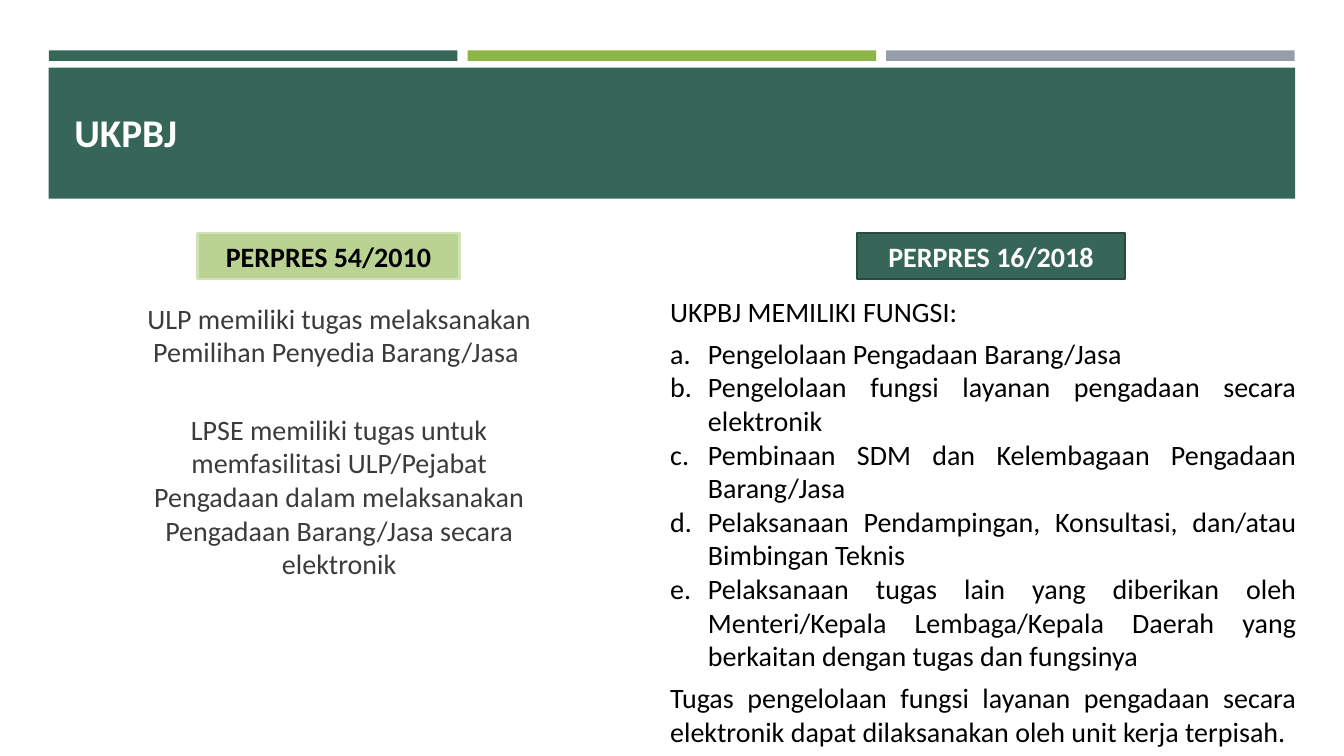
from dataclasses import dataclass

from lxml import etree
from pptx import Presentation
from pptx.dml.color import RGBColor
from pptx.enum import shapes, text
from pptx.oxml import ns
from pptx.util import Pt


@dataclass(frozen=True)
class Theme:
    font: str = "Calibri"
    title_size: float = 28
    body_size: float = 20
    green: str = "366658"
    green_edge: str = "284B41"
    lime: str = "8CB64A"
    lime_pale: str = "BAD392"
    lime_edge: str = "D1E2B7"
    gray: str = "969FA7"
    body: str = "3B3B3B"
    black: str = "000000"
    white: str = "FFFFFF"


THEME = Theme()
ALIGN = text.PP_ALIGN
ANCHOR = text.MSO_ANCHOR

OLD_DUTIES = [
    (211.7, 55.4, "ULP memiliki tugas melaksanakan Pemilihan Penyedia Barang/Jasa "),
    (290.9, 104.4, "LPSE memiliki tugas untuk memfasilitasi ULP/Pejabat Pengadaan "
                   "dalam melaksanakan Pengadaan Barang/Jasa secara elektronik"),
]
FUNCTIONS_INTRO = "UKPBJ MEMILIKI FUNGSI:"
FUNCTIONS = [
    "Pengelolaan Pengadaan Barang/Jasa",
    "Pengelolaan fungsi layanan pengadaan secara elektronik",
    "Pembinaan SDM dan Kelembagaan Pengadaan Barang/Jasa",
    "Pelaksanaan Pendampingan, Konsultasi, dan/atau Bimbingan Teknis",
    "Pelaksanaan tugas lain yang diberikan oleh Menteri/Kepala Lembaga/Kepala "
    "Daerah yang berkaitan dengan tugas dan fungsinya",
]
FUNCTIONS_NOTE = ("Tugas pengelolaan fungsi layanan pengadaan secara elektronik "
                  "dapat dilaksanakan oleh unit kerja terpisah.")


def set_all(target, values):
    for key, value in values.items():
        setattr(target, key, value)


def write(paragraph, words, color, size=THEME.body_size, bold=False, **layout):
    run = paragraph.add_run()
    run.text = words
    set_all(paragraph, layout)
    set_all(run.font, {"name": THEME.font, "size": Pt(size), "bold": bold})
    run.font.color.rgb = RGBColor.from_string(color)


def add_block(slide, box, fill, edge=None):
    block = slide.shapes.add_shape(shapes.MSO_SHAPE.RECTANGLE, *map(Pt, box))
    block.shadow.inherit = False
    block.fill.solid()
    block.fill.fore_color.rgb = RGBColor.from_string(fill)
    if edge:
        block.line.color.rgb = RGBColor.from_string(edge)
        block.line.width = Pt(1.75)
    else:
        block.line.fill.background()
    return block


def add_label(slide, box, words, fill, edge, color):
    frame = add_block(slide, box, fill, edge).text_frame
    set_all(frame, {"word_wrap": True, "vertical_anchor": ANCHOR.MIDDLE})
    write(frame.paragraphs[0], words, color, bold=True, alignment=ALIGN.CENTER)


def add_text_frame(slide, box, **options):
    frame = slide.shapes.add_textbox(*map(Pt, box)).text_frame
    set_all(frame, {"word_wrap": True, **options})
    return frame


def add_letter(paragraph, indent):
    """Number a paragraph a., b., c. with a hanging indent."""
    properties = paragraph._p.get_or_add_pPr()
    properties.set("marL", str(Pt(indent)))
    properties.set("indent", str(-Pt(indent)))
    etree.SubElement(properties, ns.qn("a:buFont"), typeface=THEME.font)
    etree.SubElement(properties, ns.qn("a:buAutoNum"), type="alphaLcPeriod")


def add_functions(slide, box):
    frame = add_text_frame(slide, box, auto_size=text.MSO_AUTO_SIZE.SHAPE_TO_FIT_TEXT)
    justified = {"color": THEME.black, "alignment": ALIGN.JUSTIFY}
    write(frame.paragraphs[0], FUNCTIONS_INTRO, space_after=Pt(6), **justified)
    for function in FUNCTIONS:
        item = frame.add_paragraph()
        add_letter(item, 27)
        write(item, function, **justified)
    write(frame.add_paragraph(), FUNCTIONS_NOTE, space_before=Pt(6),
          space_after=Pt(6), **justified)


def main():
    deck = Presentation()
    set_all(deck, {"slide_width": Pt(960), "slide_height": Pt(540)})
    slide = deck.slides.add_slide(deck.slide_layouts[6])

    # Top bars and title banner
    for column, color in enumerate((THEME.green, THEME.lime, THEME.gray)):
        add_block(slide, (35 + 299 * column, 36, 291.8, 7.5), color)
    add_block(slide, (34.8, 48.4, 890.4, 93.6), THEME.green)
    title = add_text_frame(slide, (46.1, 55.4, 868.3, 59), vertical_anchor=ANCHOR.BOTTOM)
    write(title.paragraphs[0], "UKPBJ", THEME.white, THEME.title_size, bold=True)

    # Regulation labels
    add_label(slide, (141, 166.4, 187.4, 33), "PERPRES 54/2010",
              THEME.lime_pale, THEME.lime_edge, THEME.black)
    add_label(slide, (612, 166.4, 191.8, 33), "PERPRES 16/2018",
              THEME.green, THEME.green_edge, THEME.white)

    # Duties under the old regulation
    for top, height, words in OLD_DUTIES:
        duty = add_text_frame(slide, (85.7, top, 313.2, height),
                              auto_size=text.MSO_AUTO_SIZE.SHAPE_TO_FIT_TEXT)
        write(duty.paragraphs[0], words, THEME.body, alignment=ALIGN.CENTER)

    # Functions under the new regulation
    add_functions(slide, (471.6, 206.6, 461.5, 334))

    deck.save("out.pptx")


if __name__ == "__main__":
    main()
